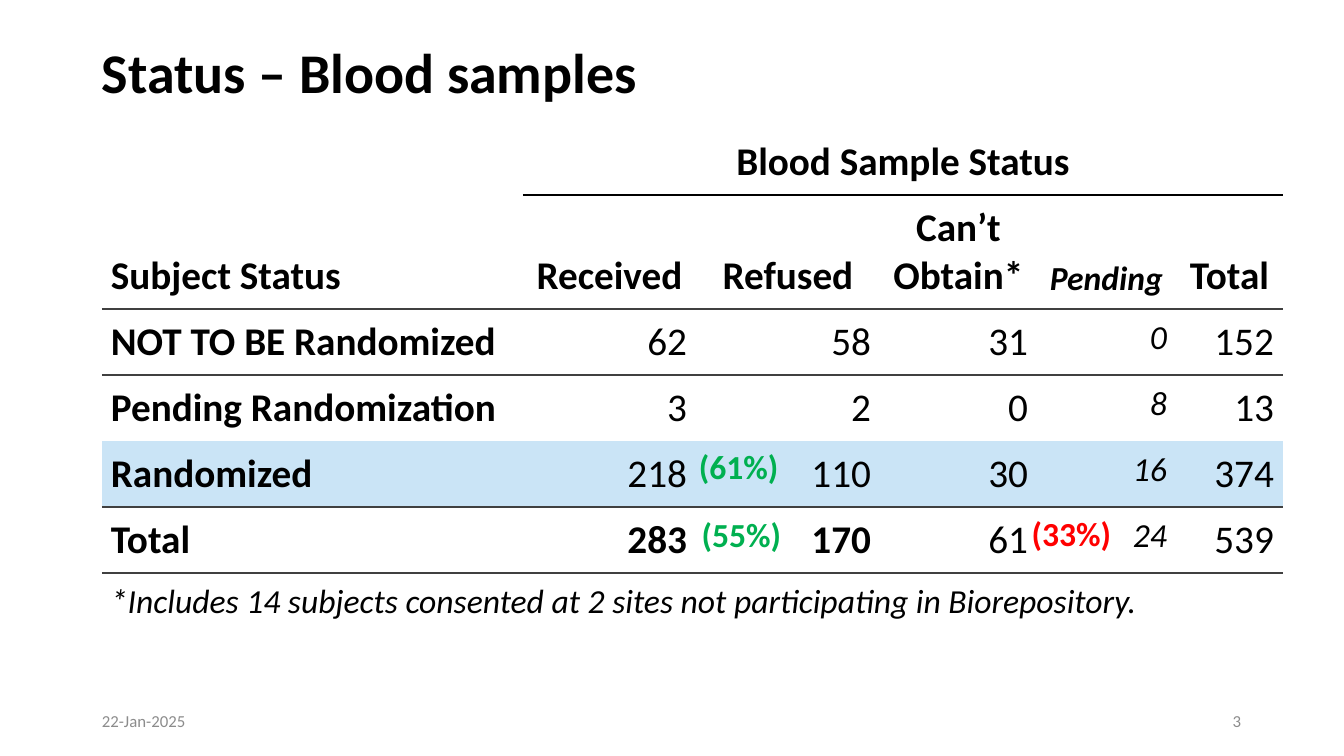
from lxml import etree
from pptx import Presentation
from pptx.dml.color import RGBColor
from pptx.enum.text import MSO_ANCHOR, PP_ALIGN
from pptx.oxml.ns import qn
from pptx.util import Pt

EMU_PER_PX = 914400 / 100.8
LEFT, CENTER, RIGHT = PP_ALIGN.LEFT, PP_ALIGN.CENTER, PP_ALIGN.RIGHT
TOP, MIDDLE, BOTTOM = MSO_ANCHOR.TOP, MSO_ANCHOR.MIDDLE, MSO_ANCHOR.BOTTOM

FONT = "Calibri"
COLORS = {
    "text": "000000",
    "rule": "404040",
    "highlight": "CAE4F6",
    "good": "00B050",
    "bad": "FF0000",
    "footer": "8C8C8C",
}
COLUMN_WIDTHS = [421, 173, 184, 157, 139, 107]
ROW_HEIGHTS = [66, 114, 66, 66, 66, 66, 59]
CELL_MARGIN = 9
HEADERS = ["Received", "Refused", "Can’t\nObtain*", "Pending", "Total"]
COUNTS = [
    ("NOT TO BE Randomized", ["62", "58", "31", "0", "152"]),
    ("Pending Randomization", ["3", "2", "0", "8", "13"]),
    ("Randomized", ["218", "110", "30", "16", "374"]),
    ("Total", ["283", "170", "61", "24", "539"]),
]
FOOTNOTE = "*Includes 14 subjects consented at 2 sites not participating in Biorepository."
PENDING_COLUMN = 4
RANDOMIZED_ROW = 4
TOTAL_ROW = 5
RULES_BELOW = {0: "text", 1: "rule", 2: "rule", 4: "rule", 5: "rule"}


def px(length):
    return round(length * EMU_PER_PX)


def write(frame, text, size, color="text", bold=False, italic=False, align=LEFT):
    for index, line in enumerate(text.split("\n")):
        paragraph = frame.add_paragraph() if index else frame.paragraphs[0]
        paragraph.alignment = align
        run = paragraph.add_run()
        run.text = line
        run.font.name = FONT
        run.font.size = Pt(size)
        run.font.bold = bold
        run.font.italic = italic
        run.font.color.rgb = RGBColor.from_string(COLORS[color])
    return frame


def add_label(slide, box, text, size, anchor=TOP, line_spacing=1.0, **style):
    frame = slide.shapes.add_textbox(*map(px, box)).text_frame
    frame.word_wrap = True
    frame.vertical_anchor = anchor
    write(frame, text, size, **style)
    frame.paragraphs[0].line_spacing = line_spacing


def set_border(cell, side, color):
    border = etree.SubElement(cell._tc.get_or_add_tcPr(), qn(f"a:ln{side}"))
    if color is None:
        border.set("w", "0")
        etree.SubElement(border, qn("a:noFill"))
        return
    border.set("w", str(Pt(1)))
    fill = etree.SubElement(border, qn("a:solidFill"))
    etree.SubElement(fill, qn("a:srgbClr"), val=COLORS[color])


def format_cell(cell, row, column):
    cell.margin_left = cell.margin_right = px(CELL_MARGIN)
    cell.margin_top = cell.margin_bottom = px(CELL_MARGIN)
    cell.vertical_anchor = BOTTOM if row < 2 else TOP
    rules = {
        edge: None if edge == 0 and column == 0 else RULES_BELOW.get(edge)
        for edge in (row - 1, row)
    }
    for side, color in zip("LRTB", (None, None, rules[row - 1], rules[row])):
        set_border(cell, side, color)
    if row == RANDOMIZED_ROW:
        cell.fill.solid()
        cell.fill.fore_color.rgb = RGBColor.from_string(COLORS["highlight"])
    else:
        cell.fill.background()


def add_status_table(slide, left, top):
    box = (left, top, sum(COLUMN_WIDTHS), sum(ROW_HEIGHTS))
    table = slide.shapes.add_table(
        len(ROW_HEIGHTS), len(COLUMN_WIDTHS), *map(px, box)
    ).table
    table.first_row = table.horz_banding = False
    for column, width in zip(table.columns, COLUMN_WIDTHS):
        column.width = px(width)
    for row, height in zip(table.rows, ROW_HEIGHTS):
        row.height = px(height)
    for row in range(len(ROW_HEIGHTS)):
        for column in range(len(COLUMN_WIDTHS)):
            format_cell(table.cell(row, column), row, column)

    table.cell(0, 0).merge(table.cell(1, 0))
    table.cell(0, 1).merge(table.cell(0, 5))
    table.cell(6, 0).merge(table.cell(6, 5))
    write(table.cell(0, 0).text_frame, "Subject Status", 28, bold=True)
    write(table.cell(0, 1).text_frame, "Blood Sample Status", 28, bold=True, align=CENTER)
    write(table.cell(6, 0).text_frame, FOOTNOTE, 24, italic=True)

    for column, header in enumerate(HEADERS, 1):
        pending = column == PENDING_COLUMN
        write(table.cell(1, column).text_frame, header, 24 if pending else 28,
              bold=True, italic=pending, align=CENTER)
    for row, (status, counts) in enumerate(COUNTS, 2):
        write(table.cell(row, 0).text_frame, status, 28, bold=True)
        for column, count in enumerate(counts, 1):
            pending = column == PENDING_COLUMN
            write(table.cell(row, column).text_frame, count, 24 if pending else 28,
                  bold=row == TOTAL_ROW and column < 3, italic=pending, align=RIGHT)


def add_percentages(slide, left, top):
    for x, y, width, share, color, align in [
        (587, 312, 105, "(61%)", "good", LEFT),
        (567, 380, 145, "(55%)", "good", CENTER),
        (897, 379, 145, "(33%)", "bad", CENTER),
    ]:
        add_label(slide, (left + x, top + y, width, 50), share, 24,
                  color=color, bold=True, align=align)


def add_footer(slide, left, top, width, height):
    part = 302
    add_label(slide, (left, top, part, height), "22-Jan-2025", 12,
              anchor=MIDDLE, color="footer")
    add_label(slide, (left + width - part, top, part, height), "3", 12,
              anchor=MIDDLE, color="footer", align=RIGHT)


def main():
    presentation = Presentation()
    presentation.slide_width, presentation.slide_height = px(1344), px(756)
    slide = presentation.slides.add_slide(presentation.slide_layouts[6])
    add_label(slide, (92, 20, 1159, 111), "Status – Blood samples", 40,
              anchor=MIDDLE, line_spacing=0.9, bold=True)
    add_status_table(slide, 102, 129)
    add_percentages(slide, 102, 129)
    add_footer(slide, 92, 701, 1159, 40)
    presentation.save("out.pptx")


if __name__ == "__main__":
    main()
